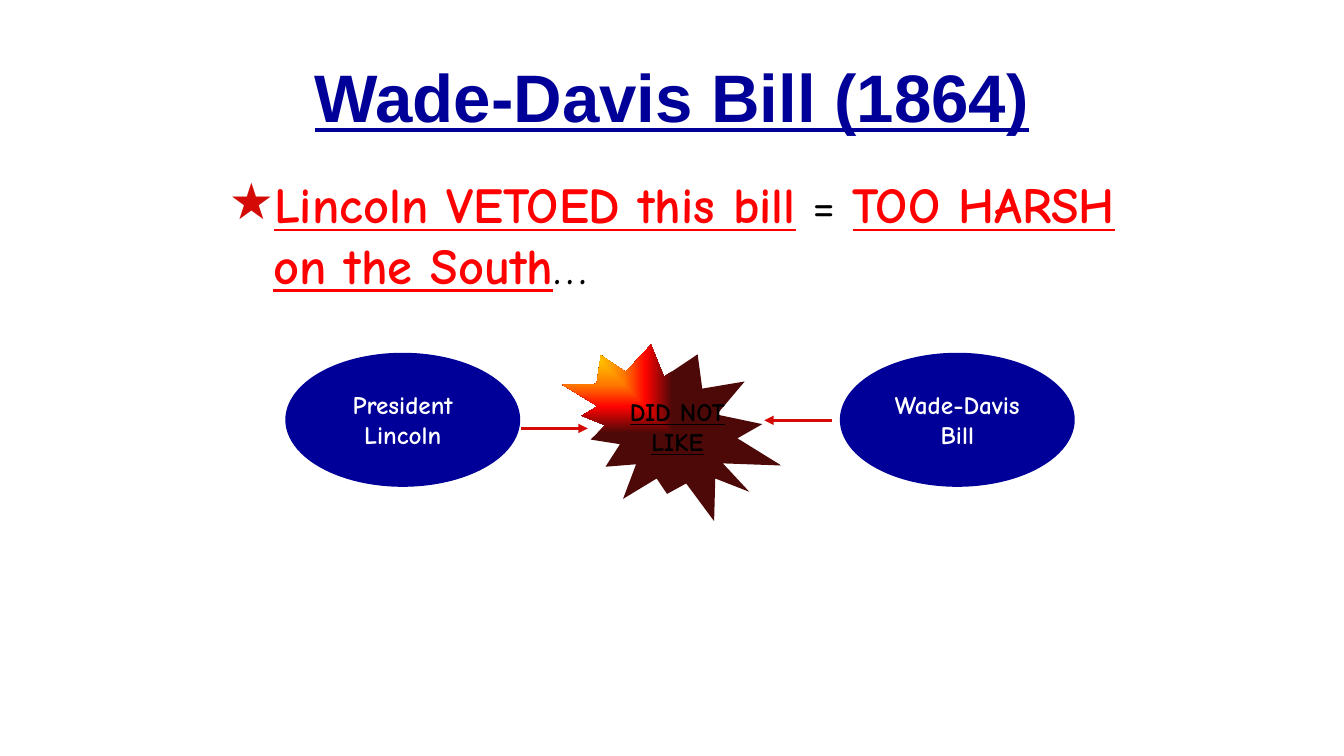
from lxml.etree import SubElement
from pptx import Presentation
from pptx.dml.color import RGBColor
from pptx.enum.shapes import MSO_CONNECTOR, MSO_SHAPE
from pptx.enum.text import MSO_ANCHOR, MSO_AUTO_SIZE, PP_ALIGN
from pptx.oxml import parse_xml
from pptx.oxml.ns import nsdecls, qn
from pptx.util import Inches, Pt

NAVY, RED, DARK, BLACK, WHITE = "000099", "FF0000", "D30A05", "000000", "FFFFFF"


def paint(color, code):
    color.rgb = RGBColor.from_string(code)


def node(text):
    """Parse one DrawingML element given without its namespace."""
    name, rest = text[1:].split(" ", 1)
    return parse_xml(f"<a:{name} {nsdecls('a')} {rest}")


class Board:
    face = "Comic Neue"

    def __init__(self, deck):
        self.slide = deck.slides.add_slide(deck.slide_layouts[1])
        self.shapes = self.slide.shapes

    def style(self, font, size, code, face=None, line=None):
        font.name, font.size = face or self.face, Pt(size)
        font.bold, font.underline = True, line
        paint(font.color, code)

    def place(self, holder, left, top, width, height):
        holder.left, holder.top = Inches(left), Inches(top)
        holder.width, holder.height = Inches(width), Inches(height)
        frame = holder.text_frame
        frame.word_wrap = True
        frame.auto_size = MSO_AUTO_SIZE.SHAPE_TO_FIT_TEXT
        frame.vertical_anchor = MSO_ANCHOR.TOP
        para = frame.paragraphs[0]
        gap = SubElement(para._p.get_or_add_pPr(), qn("a:spcBef"))
        SubElement(gap, qn("a:spcPct"), val="50000")
        return para

    def title(self, text, *box):
        para = self.place(self.shapes.title, *box)
        para.alignment = PP_ALIGN.CENTER
        self.style(para.font, 48, NAVY, "Arial", True)
        run = para.add_run()
        run.text = text
        run._r.get_or_add_rPr().append(node(
            '<effectLst xmlns="http://schemas.openxmlformats.org/drawingml/2006/main">'
            '<a:outerShdw dist="35921" dir="2700000">'
            f'<a:srgbClr val="{RED}"/></a:outerShdw></a:effectLst>'))

    def point(self, parts, *box):
        """Write a starred line of (text, colour, bold, underline) parts."""
        para = self.place(self.slide.placeholders[1], *box)
        props = para._p.get_or_add_pPr()
        props.set("marL", str(Inches(0.44)))
        props.set("indent", str(-Inches(0.44)))
        color = SubElement(props, qn("a:buClr"))
        SubElement(color, qn("a:srgbClr"), val=DARK)
        SubElement(props, qn("a:buFont"), typeface=self.face)
        SubElement(props, qn("a:buChar"), char="★")
        para.font.name, para.font.size = self.face, Pt(36)
        for text, code, bold, line in parts:
            run = para.add_run()
            run.text = text
            run.font.bold, run.font.underline = bold, line
            paint(run.font.color, code)

    def shape(self, kind, text, code, line, *box):
        item = self.shapes.add_shape(kind, *map(Inches, box))
        item.shadow.inherit = False
        item.line.fill.background()
        frame = item.text_frame
        frame.text = text
        frame.word_wrap = False
        frame.vertical_anchor = MSO_ANCHOR.MIDDLE
        for para in frame.paragraphs:
            para.alignment = PP_ALIGN.CENTER
            self.style(para.font, 18, code, line=line)
        return item

    def oval(self, text, left):
        item = self.shape(MSO_SHAPE.OVAL, text, WHITE, None, left, 3.5, 2.33, 1.33)
        item.fill.solid()
        paint(item.fill.fore_color, NAVY)

    def burst(self, text, *box):
        item = self.shape(MSO_SHAPE.EXPLOSION2, text, BLACK, True, *box)
        item.rotation = 90
        body = item.text_frame._txBody.bodyPr
        body.set("vert", "eaVert")
        body.set("rot", "10800000")
        stops = [(0, "FFF200"), (45, "FF7A00"), (70, "FF0300"), (100, "4D0808")]
        marks = "".join(f'<a:gs pos="{pos * 1000}"><a:srgbClr val="{code}"/></a:gs>'
                        for pos, code in stops)
        item._element.spPr.find(qn("a:prstGeom")).addnext(node(
            f'<gradFill rotWithShape="0"><a:gsLst>{marks}</a:gsLst><a:path path="rect">'
            '<a:fillToRect r="100000" b="100000"/></a:path></a:gradFill>'))

    def arrow(self, start, end, top):
        item = self.shapes.add_connector(
            MSO_CONNECTOR.STRAIGHT, *map(Inches, (start, top, end, top)))
        item.line.width = Pt(2.25)
        paint(item.line.color, DARK)
        SubElement(item.line._get_or_add_ln(), qn("a:tailEnd"), type="triangle")
        SubElement(item._element.spPr, qn("a:effectLst"))


def main():
    deck = Presentation()
    deck.slide_width, deck.slide_height = Inches(13.33), Inches(7.5)
    board = Board(deck)
    board.title("Wade-Davis Bill (1864)", 2.08, 0.5, 9.17, 0.9)
    board.point([("Lincoln VETOED this bill", RED, True, True),
                 (" ", RED, False, False),
                 ("= ", BLACK, False, False),
                 ("TOO HARSH on the South", RED, True, True),
                 ("…", BLACK, False, False)], 2.17, 1.67, 9.08, 1.31)
    board.oval("President\vLincoln", 2.83)
    board.oval("Wade-Davis\vBill", 8.33)
    board.burst("DID NOT\nLIKE", 5.79, 3.21, 1.75, 2.17)
    board.arrow(8.25, 7.58, 4.17)
    board.arrow(5.17, 5.83, 4.25)
    deck.save("out.pptx")


if __name__ == "__main__":
    main()
